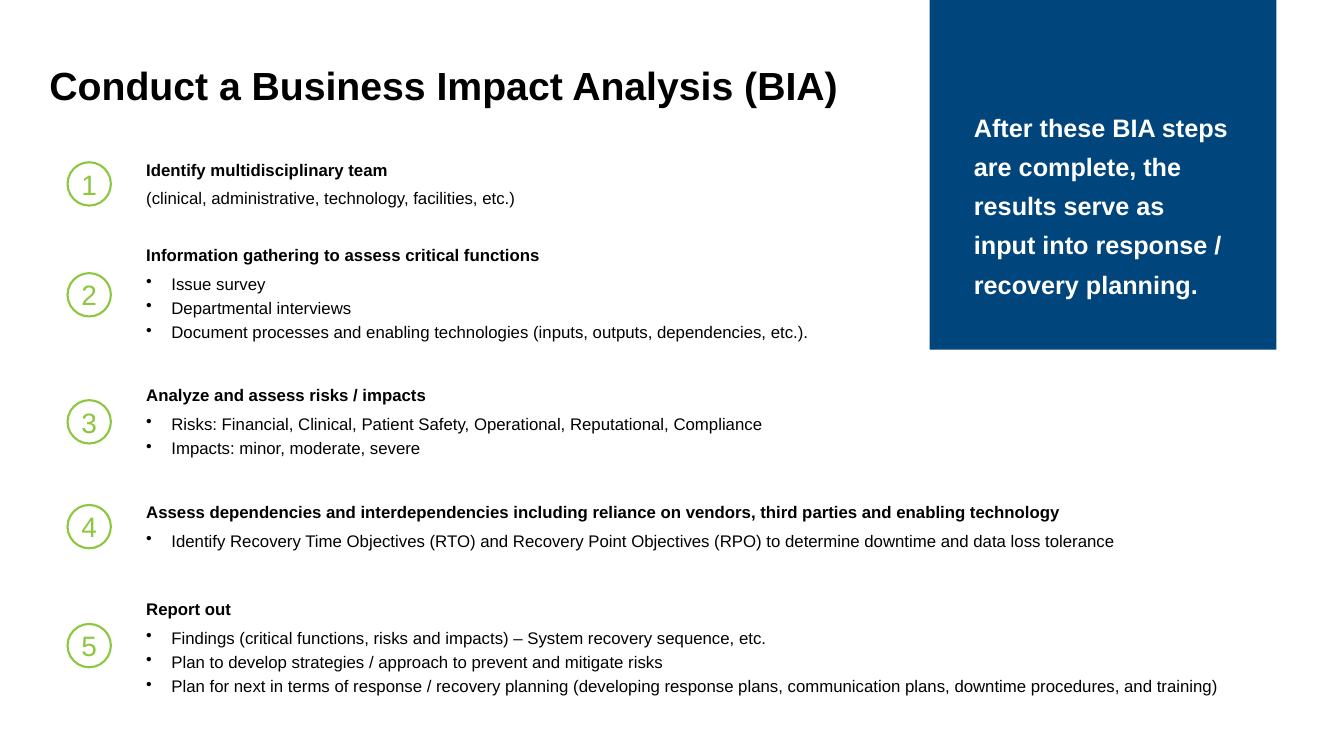
from lxml import etree
from pptx import Presentation
from pptx.dml.color import RGBColor
from pptx.enum.shapes import MSO_SHAPE
from pptx.enum.text import MSO_ANCHOR, PP_ALIGN
from pptx.oxml.ns import qn
from pptx.util import Inches, Pt

RECTANGLE, OVAL = MSO_SHAPE.RECTANGLE, MSO_SHAPE.OVAL
MIDDLE, CENTER = MSO_ANCHOR.MIDDLE, PP_ALIGN.CENTER
COLORS = {"text": "000000", "panel": "00457C", "panel_text": "FFFFFF", "badge": "8DC63F"}
FONT = "Arial"
BADGE_LEFT, BADGE_SIZE, STEP_LEFT = 0.67, 0.43, 1.45
TITLE = "Conduct a Business Impact Analysis (BIA)"
CALLOUT = ("After these BIA steps are complete, the results serve as "
           "input into response / recovery planning.")

# Each step: badge top, text top, width, height, heading, detail lines, bulleted
STEPS = [
    (1.61, 1.58, 3.81, 0.36, "Identify multidisciplinary team",
     ["(clinical, administrative, technology, facilities, etc.)"], False),
    (2.71, 2.43, 8.11, 1.1, "Information gathering to assess critical functions",
     ["Issue survey", "Departmental interviews",
      "Document processes and enabling technologies (inputs, outputs, dependencies, etc.)."], True),
    (3.97, 3.82, 8.58, 0.6, "Analyze and assess risks / impacts",
     ["Risks: Financial, Clinical, Patient Safety, Operational, Reputational, Compliance",
      "Impacts: minor, moderate, severe"], True),
    (5.01, 4.98, 10.88, 0.43,
     "Assess dependencies and interdependencies including reliance on vendors, "
     "third parties and enabling technology",
     ["Identify Recovery Time Objectives (RTO) and Recovery Point Objectives (RPO) "
      "to determine downtime and data loss tolerance"], True),
    (6.19, 5.94, 10.95, 1.05, "Report out",
     ["Findings (critical functions, risks and impacts) – System recovery sequence, etc.",
      "Plan to develop strategies / approach to prevent and mitigate risks",
      "Plan for next in terms of response / recovery planning (developing response plans, "
      "communication plans, downtime procedures, and training)"], True),
]


def rgb(name):
    """Return the named colour."""
    return RGBColor.from_string(COLORS[name])


def clear_margins(frame):
    """Wrap the text and remove the insets."""
    frame.word_wrap = True
    frame.margin_left = frame.margin_right = frame.margin_top = frame.margin_bottom = 0


def write(paragraph, text, size, color="text", bold=False, after=0, spacing=None):
    """Fill a paragraph and set its font and spacing."""
    paragraph.text = text
    font = paragraph.font
    font.name, font.size, font.bold = FONT, Pt(size), bold
    font.color.rgb = rgb(color)
    paragraph.space_after = Pt(after)
    if spacing:
        paragraph.line_spacing = spacing


def add_bullet(paragraph):
    """Give a paragraph a hanging round bullet."""
    properties = paragraph._p.get_or_add_pPr()
    properties.set("marL", str(Inches(0.25)))
    properties.set("indent", str(-Inches(0.25)))
    bullet = etree.Element(qn("a:buChar"), char="•")
    properties.find(qn("a:defRPr")).addprevious(bullet)


def add_text(slide, left, top, width, height):
    """Add an empty text box and return its text frame."""
    box = slide.shapes.add_textbox(Inches(left), Inches(top), Inches(width), Inches(height))
    clear_margins(box.text_frame)
    return box.text_frame


def add_panel(slide):
    """Add the blue panel with its message."""
    panel = slide.shapes.add_shape(RECTANGLE, Inches(9.22), 0, Inches(3.44), Inches(3.47))
    panel.shadow.inherit = False
    panel.fill.solid()
    panel.fill.fore_color.rgb = rgb("panel")
    panel.line.fill.background()
    frame = add_text(slide, 9.66, 1.02, 2.57, 2.04)
    write(frame.paragraphs[0], CALLOUT, 18, "panel_text", True, after=12, spacing=1.3)


def add_badge(slide, number, top):
    """Add a numbered circle."""
    badge = slide.shapes.add_shape(OVAL, Inches(BADGE_LEFT), Inches(top),
                                   Inches(BADGE_SIZE), Inches(BADGE_SIZE))
    badge.shadow.inherit = False
    badge.fill.background()
    badge.line.color.rgb = rgb("badge")
    badge.line.width = Pt(1.5)
    frame = badge.text_frame
    clear_margins(frame)
    frame.vertical_anchor = MIDDLE
    paragraph = frame.paragraphs[0]
    write(paragraph, str(number), 20, "badge", after=3)
    paragraph.alignment = CENTER


def add_step(slide, top, width, height, heading, details, bulleted):
    """Add a bold heading with its detail lines."""
    frame = add_text(slide, STEP_LEFT, top, width, height)
    write(frame.paragraphs[0], heading, 12, bold=True, after=6)
    for detail in details:
        paragraph = frame.add_paragraph()
        write(paragraph, detail, 12, after=3)
        if bulleted:
            add_bullet(paragraph)


def main():
    """Build and save the slide."""
    presentation = Presentation()
    presentation.slide_width, presentation.slide_height = Inches(13.33), Inches(7.5)
    slide = presentation.slides.add_slide(presentation.slide_layouts[6])
    title = add_text(slide, 0.49, 0.66, 8.29, 0.55)
    write(title.paragraphs[0], TITLE, 28, bold=True, spacing=0.9)
    add_panel(slide)
    for number, (badge_top, *step) in enumerate(STEPS, 1):
        add_badge(slide, number, badge_top)
        add_step(slide, *step)
    presentation.save("out.pptx")


if __name__ == "__main__":
    main()
